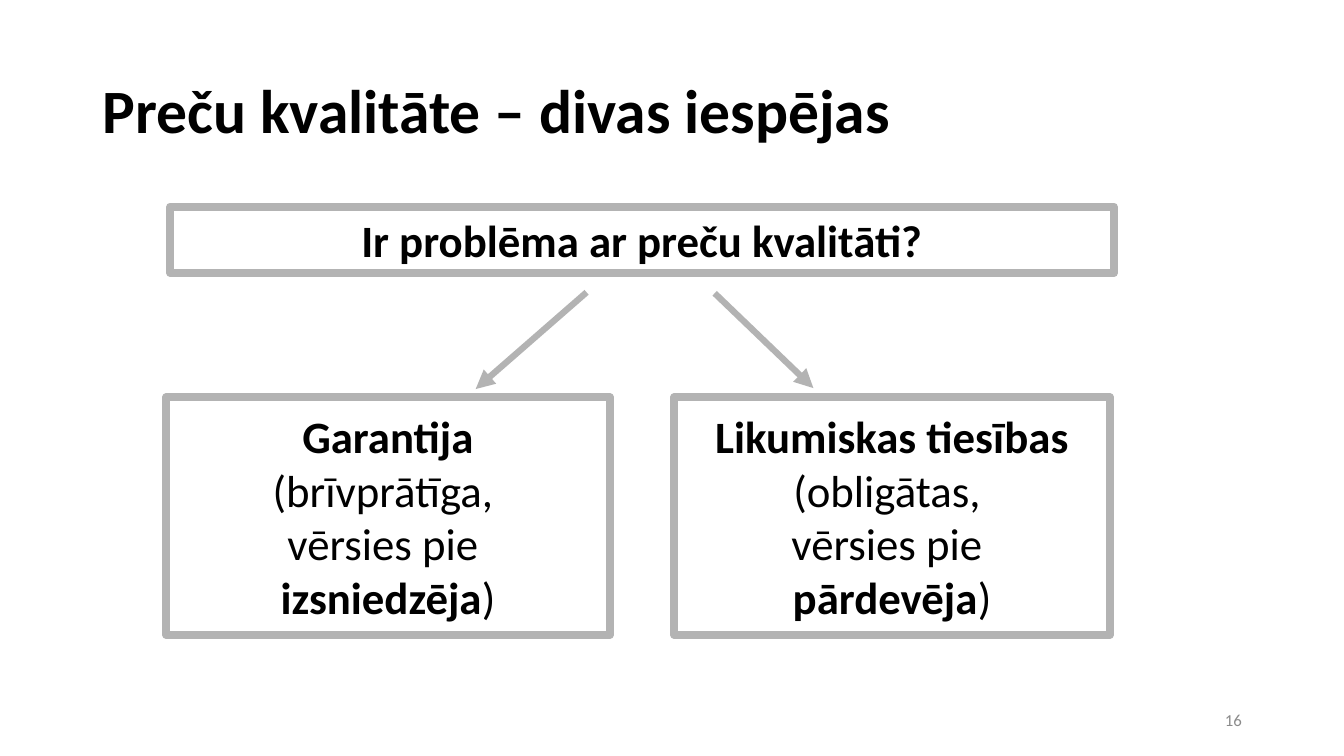
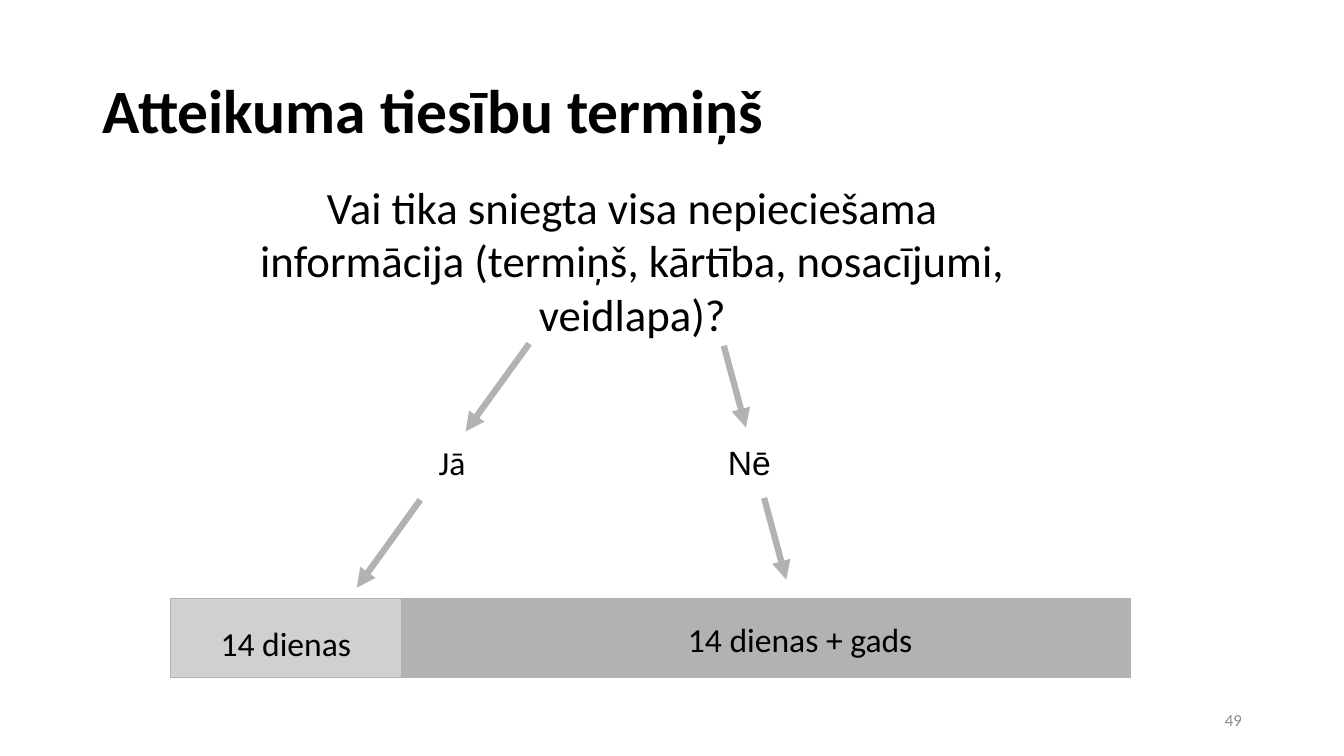
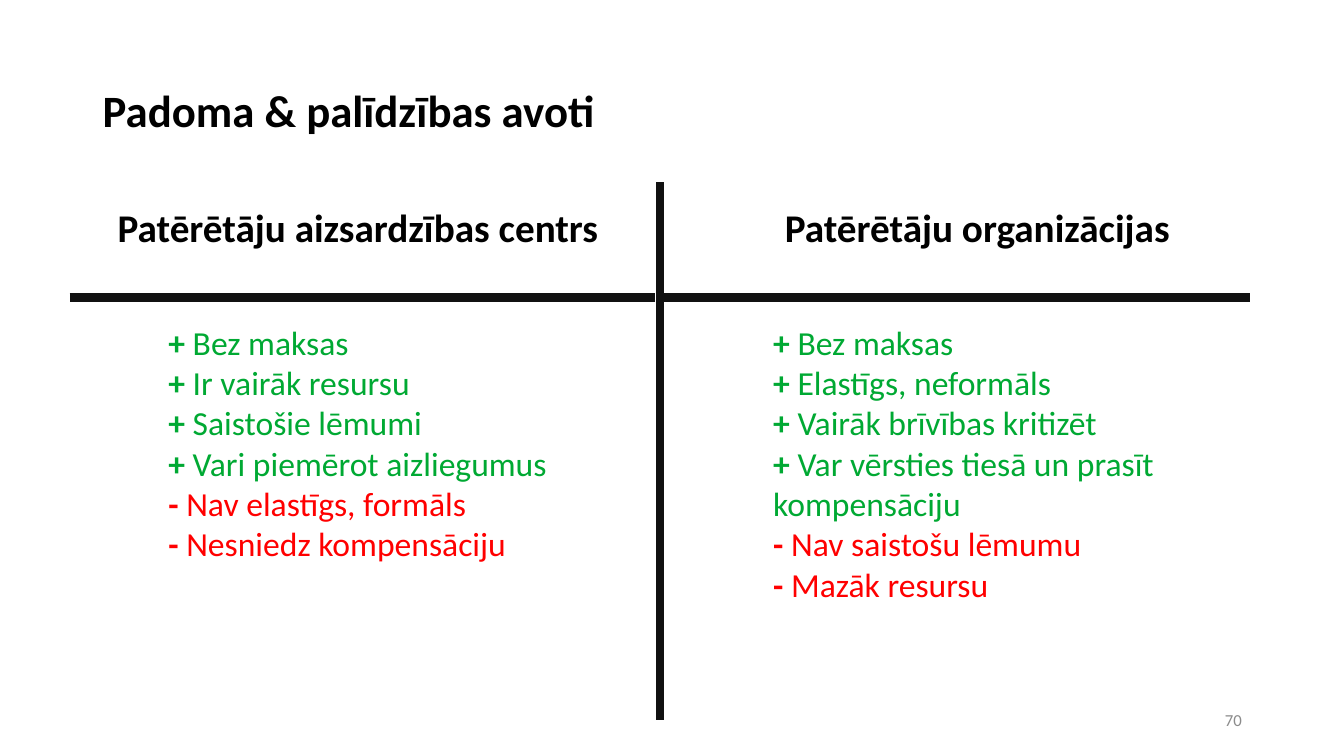
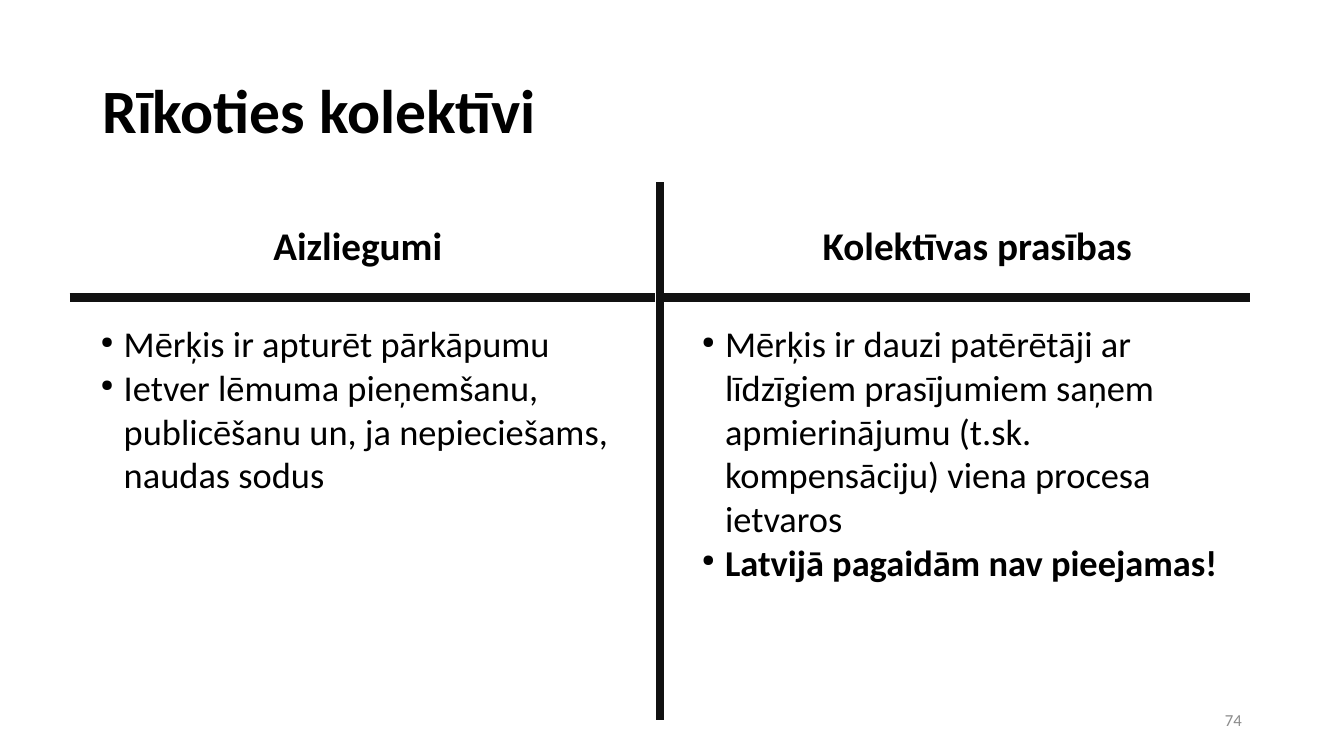
import pptx
import pptx.util
import pptx.dml.color
import pptx.enum.shapes
import pptx.enum.text
import pptx.oxml
import pptx.oxml.ns

Pt = pptx.util.Pt
RGB = pptx.dml.color.RGBColor
Align = pptx.enum.text.PP_ALIGN
Anchor = pptx.enum.text.MSO_ANCHOR
RECT = pptx.enum.shapes.MSO_SHAPE.RECTANGLE
STRAIGHT = pptx.enum.shapes.MSO_CONNECTOR.STRAIGHT
qn = pptx.oxml.ns.qn

BLACK = RGB(0x00, 0x00, 0x00)
INK = RGB(0x11, 0x11, 0x11)
GREY = RGB(0xB2, 0xB2, 0xB2)
EDGE = RGB(0xB3, 0xB3, 0xB3)
PALE = RGB(0x8B, 0x8B, 0x8B)
GREEN = RGB(0x00, 0xA9, 0x33)
RED = RGB(0xFF, 0x00, 0x00)
BOLD = {"bold": True}


def write(shape, paras, size, align=Align.CENTER, anchor=Anchor.TOP, **look):
    """Fill a shape; each paragraph is a list of (text, format) runs."""
    frame = shape.text_frame
    frame.word_wrap = True
    frame.auto_size = pptx.enum.text.MSO_AUTO_SIZE.NONE
    frame.vertical_anchor = anchor
    for num, runs in enumerate(paras):
        para = frame.paragraphs[0] if num == 0 else frame.add_paragraph()
        para.alignment = align
        for text, extra in runs:
            run = para.add_run()
            run.text = text
            style = {"name": "Calibri", "size": Pt(size), "bold": False,
                     "color": BLACK, **look, **extra}
            run.font.color.rgb = style.pop("color")
            for key, value in style.items():
                setattr(run.font, key, value)
    return frame


def draw(slide, ends, color, width, head=False):
    """Draw a straight line, with an arrowhead at its end if asked."""
    line = slide.shapes.add_connector(STRAIGHT, *map(Pt, ends))
    line.line.color.rgb = color
    line.line.width = Pt(width)
    props = line.line._get_or_add_ln()
    if head:
        props.append(pptx.oxml.parse_xml(
            '<a:tailEnd %s type="triangle"/>' % pptx.oxml.ns.nsdecls("a")))
    props.getparent().append(pptx.oxml.parse_xml(
        "<a:effectLst %s/>" % pptx.oxml.ns.nsdecls("a")))


deck = pptx.Presentation()
deck.slide_width, deck.slide_height = Pt(960), Pt(540)

# Titles and page numbers
slides = []
for title, size, page in [
    ("Preču kvalitāte – divas iespējas", 44, "16"),
    ("Atteikuma tiesību termiņš", 44, "49"),
    ("Padoma & palīdzības avoti", 32, "70"),
    ("Rīkoties kolektīvi", 44, "74"),
]:
    slide = deck.slides.add_slide(deck.slide_layouts[5])
    head = slide.shapes.title
    head.left, head.top, head.width, head.height = map(Pt, (66.2, 28.8, 828, 104.4))
    frame = write(head, [[(title, BOLD)]], size, Align.LEFT, Anchor.MIDDLE)
    frame.paragraphs[0].line_spacing = 0.9
    foot = slide.shapes.add_textbox(*map(Pt, (678.2, 500.4, 216, 28)))
    write(foot, [[(page, {})]], 12, Align.RIGHT, Anchor.MIDDLE, color=PALE)
    slides.append(slide)
choice, term, advice, joint = slides

# Slide 1: a question and two choices
for place, paras in [
    ((121.7, 147.6, 673.9, 47.5), [[("Ir problēma ar preču kvalitāti?", BOLD)]]),
    ((118.8, 283.7, 316.8, 169.9), [
        [("Garantija", BOLD)], [("(brīvprātīga, ", {})], [("vērsies pie ", {})],
        [("izsniedzēja", BOLD), (")", {})]]),
    ((481.7, 283.7, 311, 169.9), [
        [("Likumiskas tiesības", BOLD)], [("(obligātas, ", {})], [("vērsies pie ", {})],
        [("pārdevēja", BOLD), (")", {})]]),
]:
    box = choice.shapes.add_shape(RECT, *map(Pt, place))
    box.shadow.inherit = False
    box.fill.background()
    box.line.color.rgb = EDGE
    box.line.width = Pt(5.67)
    frame = write(box, paras, 32, anchor=Anchor.MIDDLE)
    frame.word_wrap = False
    frame.margin_left = frame.margin_right = Pt(10)
    frame.margin_top = frame.margin_bottom = Pt(6.5)

for ends in [(419, 208.8, 339.8, 277.9), (510.5, 209.5, 581, 277.2)]:
    draw(choice, ends, EDGE, 4.5, head=True)

# Slide 2: time bar
for left, width, clear in [(121.7, 164.9, True), (286.6, 521.3, False)]:
    bar = term.shapes.add_shape(RECT, *map(Pt, (left, 427.7, width, 56.2)))
    bar.shadow.inherit = False
    bar.fill.solid()
    bar.fill.fore_color.rgb = GREY
    bar.line.color.rgb = GREY
    bar.line.width = Pt(0)
    if clear:
        tint = bar._element.spPr.find(qn("a:solidFill"))[0]
        tint.append(pptx.oxml.parse_xml(
            '<a:alpha %s val="60000"/>' % pptx.oxml.ns.nsdecls("a")))

# Slide 2: question, answers and labels
for place, text, size, anchor, font in [
    ((342.3, 438.5, 458.6, 36), "14 dienas + gads", 24, Anchor.MIDDLE, "Calibri"),
    ((99.4, 441.4, 209.5, 36), "14 dienas", 24, Anchor.MIDDLE, "Calibri"),
    ((175.7, 124.6, 552.2, 122.4),
     "Vai tika sniegta visa nepieciešama informācija (termiņš, kārtība, "
     "nosacījumi, veidlapa)?", 32, Anchor.TOP, "Calibri"),
    ((280.8, 311.8, 84.2, 36), "Jā", 24, Anchor.TOP, "Calibri"),
    ((493.2, 311.8, 84.2, 36), "Nē", 24, Anchor.TOP, "Arial"),
]:
    label = term.shapes.add_textbox(*map(Pt, place))
    write(label, [[(text, {})]], size, anchor=anchor, name=font)

for ends in [(378, 245.5, 332.6, 308.2), (300.2, 357.1, 254.9, 419.8),
             (517, 247, 532.8, 305.3), (545.8, 355.7, 561.6, 414)]:
    draw(term, ends, GREY, 4.5, head=True)

# Slides 3 and 4: crossed rules and column heads
for slide, top, names in [
    (advice, 141.8, ("Patērētāju aizsardzības centrs", "Patērētāju organizācijas")),
    (joint, 154.5, ("Aizliegumi", "Kolektīvas prasības")),
]:
    for ends in [(49.7, 212.4, 468, 212.4), (471.6, 514.1, 471.6, 130.3),
                 (474.5, 212.4, 892.8, 212.4)]:
        draw(slide, ends, INK, 6)
    for left, width, name in zip((53.3, 478.8), (404.6, 438.5), names):
        head = slide.shapes.add_textbox(*map(Pt, (left, top, width, 50)))
        write(head, [[(name, BOLD)]], 28)

# Slide 3: pros and cons
for left, pros, cons in [
    (53.3, ["Bez maksas", "Ir vairāk resursu", "Saistošie lēmumi",
            "Vari piemērot aizliegumus"],
     ["Nav elastīgs, formāls", "Nesniedz kompensāciju"]),
    (485.3, ["Bez maksas", "Elastīgs, neformāls", "Vairāk brīvības kritizēt",
             "Var vērsties tiesā un prasīt kompensāciju"],
     ["Nav saistošu lēmumu", "Mazāk resursu"]),
]:
    paras = []
    for sign, color, items in [("+ ", GREEN, pros), ("- ", RED, cons)]:
        for item in items:
            paras.append([(sign, {"bold": True, "color": color}),
                          (item, {"color": color})])
    column = advice.shapes.add_textbox(*map(Pt, (left, 226.1, 404.6, 286)))
    frame = write(column, paras, 24, Align.LEFT)
    frame.margin_left = Pt(67)

# Slide 4: bullet lists
for left, indent, paras in [
    (53.3, 28, [
        [("Mērķis ir apturēt pārkāpumu", {})],
        [("Ietver lēmuma pieņemšanu, publicēšanu un, ja nepieciešams, "
          "naudas sodus", {})]]),
    (485.3, 25.5, [
        [("Mērķis ir dauzi patērētāji ar līdzīgiem prasījumiem saņem "
          "apmierinājumu (t.sk. kompensāciju) viena procesa ietvaros", {})],
        [("Latvijā pagaidām nav pieejamas!", BOLD)]]),
]:
    column = joint.shapes.add_textbox(*map(Pt, (left, 226.1, 404.6, 286)))
    frame = write(column, paras, 26, Align.LEFT)
    for para in frame.paragraphs:
        props = para._p.get_or_add_pPr()
        props.set("marL", str(Pt(indent)))
        props.set("indent", str(Pt(-16.5)))
        for mark in ('<a:buClr %s><a:srgbClr val="000000"/></a:buClr>',
                     '<a:buSzPct %s val="45000"/>', '<a:buChar %s char="●"/>'):
            props.append(pptx.oxml.parse_xml(mark % pptx.oxml.ns.nsdecls("a")))

deck.save("out.pptx")
